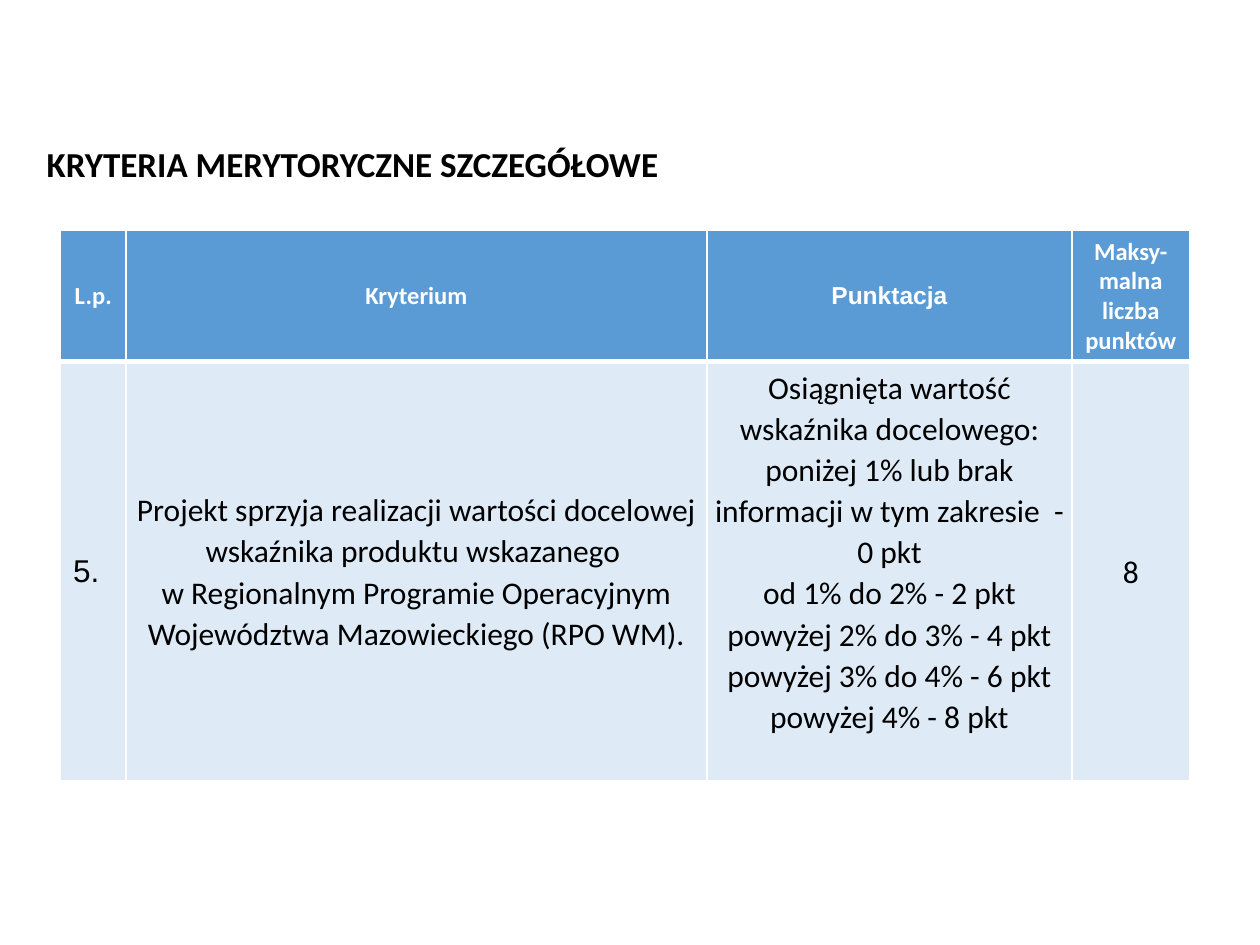
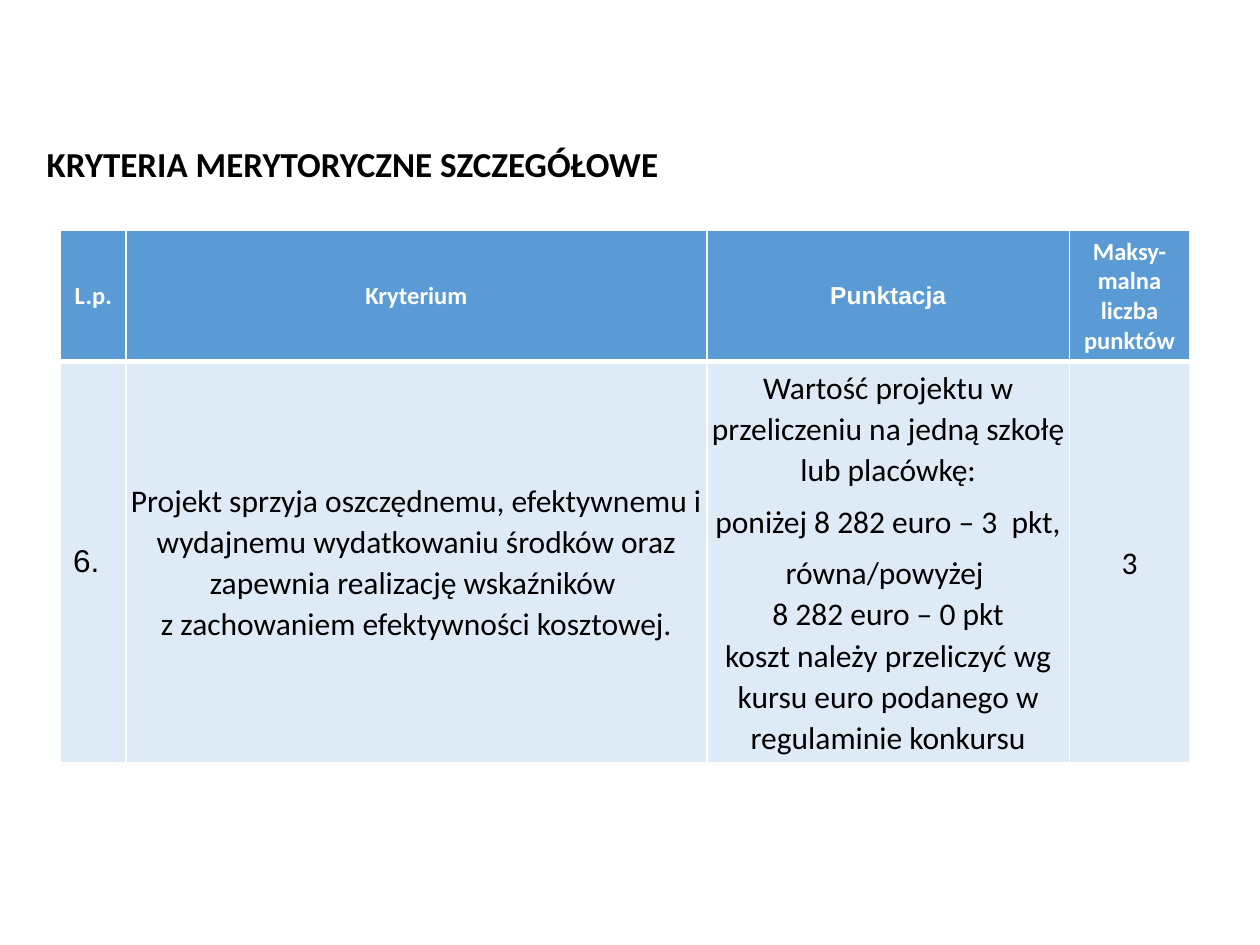
"""Builds two slides of detailed scoring criteria, each with a title and a table."""
from dataclasses import dataclass

from lxml.etree import SubElement
from pptx import Presentation
from pptx.dml.color import RGBColor
from pptx.enum.text import MSO_ANCHOR, MSO_AUTO_SIZE, PP_ALIGN
from pptx.oxml.ns import qn
from pptx.util import Inches, Pt


@dataclass(frozen=True)
class Theme:
    ink: str = "000000"
    paper: str = "FFFFFF"
    header_fill: str = "5B9BD5"
    body_fill: str = "DEEBF7"
    main_font: str = "Calibri"
    alternate_font: str = "Arial"
    title_size: int = 20
    header_size: int = 14
    body_size: int = 18
    line_spacing: float = 1.07
    thin_border: int = 1
    header_border: int = 3


HEADINGS = ["L.p.", "Kryterium", "Punktacja", "Maksy-malna liczba punktów"]
HEADER_HEIGHT = 1.04
TIGHT_MARGIN = 0.04

CRITERIA = [
    {
        "number": "5.",
        "criterion": "Projekt sprzyja realizacji wartości docelowej wskaźnika produktu wskazanego \n"
                     "w Regionalnym Programie Operacyjnym Województwa Mazowieckiego (RPO WM).",
        "scoring": [
            ("Osiągnięta wartość wskaźnika docelowego:", 0),
            ("poniżej 1% lub brak informacji w tym zakresie  - 0 pkt", 0),
            ("od 1% do 2% - 2 pkt", 0),
            ("powyżej 2% do 3% - 4 pkt", 0),
            ("powyżej 3% do 4% - 6 pkt", 0),
            ("powyżej 4% - 8 pkt", 0),
        ],
        "maximum": "8",
        "widths": [0.52, 4.61, 2.9, 0.93],
        "body_height": 3.33,
        "scoring_bottom": 0.36,
    },
    {
        "number": "6.",
        "criterion": "Projekt sprzyja oszczędnemu, efektywnemu i wydajnemu wydatkowaniu środków "
                     "oraz zapewnia realizację wskaźników \nz zachowaniem efektywności kosztowej.",
        "scoring": [
            ("Wartość projektu w przeliczeniu na jedną szkołę lub placówkę:", 0),
            ("poniżej 8 282 euro – 3  pkt,", 6),
            ("równa/powyżej \n8 282 euro – 0 pkt", 6),
            ("koszt należy przeliczyć wg kursu euro podanego w regulaminie konkursu", 0),
        ],
        "maximum": "3",
        "widths": [0.52, 4.61, 2.88, 0.95],
        "body_height": 3.18,
        "scoring_bottom": TIGHT_MARGIN,
    },
]


class CriteriaDeck:
    """Holds the theme and the current slide, and adds elements to it."""

    def __init__(self, theme):
        self.theme = theme
        self.deck = Presentation()
        self.deck.slide_width, self.deck.slide_height = Inches(10), Inches(7.5)
        self.slide = None

    def add_slide(self):
        self.slide = self.deck.slides.add_slide(self.deck.slide_layouts[5])

    def add_text(self, paragraph, text, size, color, bold=False, font=None):
        for index, line in enumerate(text.split("\n")):
            if index:
                paragraph.add_line_break()
            run = paragraph.add_run()
            run.text = line
            run.font.name = font or self.theme.main_font
            run.font.size = Pt(size)
            run.font.bold = bold
            run.font.color.rgb = RGBColor.from_string(color)

    def add_title(self, text):
        title = self.slide.shapes.title
        title.left, title.top = Inches(0.27), Inches(1.08)
        title.width, title.height = Inches(5.18), Inches(0.44)
        frame = title.text_frame
        frame.word_wrap = False
        frame.auto_size = MSO_AUTO_SIZE.SHAPE_TO_FIT_TEXT
        frame.vertical_anchor = MSO_ANCHOR.MIDDLE
        paragraph = frame.paragraphs[0]
        paragraph.alignment = PP_ALIGN.LEFT
        self.add_text(paragraph, text, self.theme.title_size, self.theme.ink, bold=True)

    def style_cell(self, cell, fill, top, bottom):
        cell.vertical_anchor = MSO_ANCHOR.MIDDLE
        properties = cell._tc.get_or_add_tcPr()
        thin = self.theme.thin_border
        for side, width in (("L", thin), ("R", thin), ("T", top), ("B", bottom)):
            border = SubElement(properties, qn(f"a:ln{side}"), w=str(Pt(width)))
            color = SubElement(border, qn("a:solidFill"))
            SubElement(color, qn("a:srgbClr"), val=self.theme.paper)
        cell.fill.solid()
        cell.fill.fore_color.rgb = RGBColor.from_string(fill)

    def fill_header(self, cell, heading):
        theme = self.theme
        self.style_cell(cell, theme.header_fill, theme.thin_border, theme.header_border)
        paragraph = cell.text_frame.paragraphs[0]
        paragraph.alignment = PP_ALIGN.CENTER
        font = theme.alternate_font if heading == "Punktacja" else theme.main_font
        self.add_text(paragraph, heading, theme.header_size, theme.paper, True, font)

    def fill_number(self, cell, number):
        theme = self.theme
        self.style_cell(cell, theme.body_fill, theme.header_border, theme.thin_border)
        self.add_text(cell.text_frame.paragraphs[0], number, theme.body_size, theme.ink,
                      font=theme.alternate_font)

    def fill_body(self, cell, entries, bottom_margin=TIGHT_MARGIN):
        theme = self.theme
        self.style_cell(cell, theme.body_fill, theme.header_border, theme.thin_border)
        cell.margin_left = cell.margin_right = cell.margin_top = Inches(TIGHT_MARGIN)
        cell.margin_bottom = Inches(bottom_margin)
        frame = cell.text_frame
        for index, (text, space_before) in enumerate(entries):
            paragraph = frame.add_paragraph() if index else frame.paragraphs[0]
            paragraph.alignment = PP_ALIGN.CENTER
            paragraph.line_spacing = theme.line_spacing
            if space_before:
                paragraph.space_before = Pt(space_before)
            self.add_text(paragraph, text, theme.body_size, theme.ink)

    def add_criteria_table(self, entry):
        heights = [HEADER_HEIGHT, entry["body_height"]]
        table = self.slide.shapes.add_table(
            2, len(HEADINGS), Inches(0.48), Inches(1.83),
            Inches(sum(entry["widths"])), Inches(sum(heights))).table
        table.horz_banding = False
        for column, width in zip(table.columns, entry["widths"]):
            column.width = Inches(width)
        for row, height in zip(table.rows, heights):
            row.height = Inches(height)
        for index, heading in enumerate(HEADINGS):
            self.fill_header(table.cell(0, index), heading)
        self.fill_number(table.cell(1, 0), entry["number"])
        self.fill_body(table.cell(1, 1), [(entry["criterion"], 0)])
        self.fill_body(table.cell(1, 2), entry["scoring"], entry["scoring_bottom"])
        self.fill_body(table.cell(1, 3), [(entry["maximum"], 0)])


def main():
    criteria_deck = CriteriaDeck(Theme())
    for entry in CRITERIA:
        criteria_deck.add_slide()
        criteria_deck.add_title("KRYTERIA MERYTORYCZNE SZCZEGÓŁOWE")
        criteria_deck.add_criteria_table(entry)
    criteria_deck.deck.save("out.pptx")


if __name__ == "__main__":
    main()
